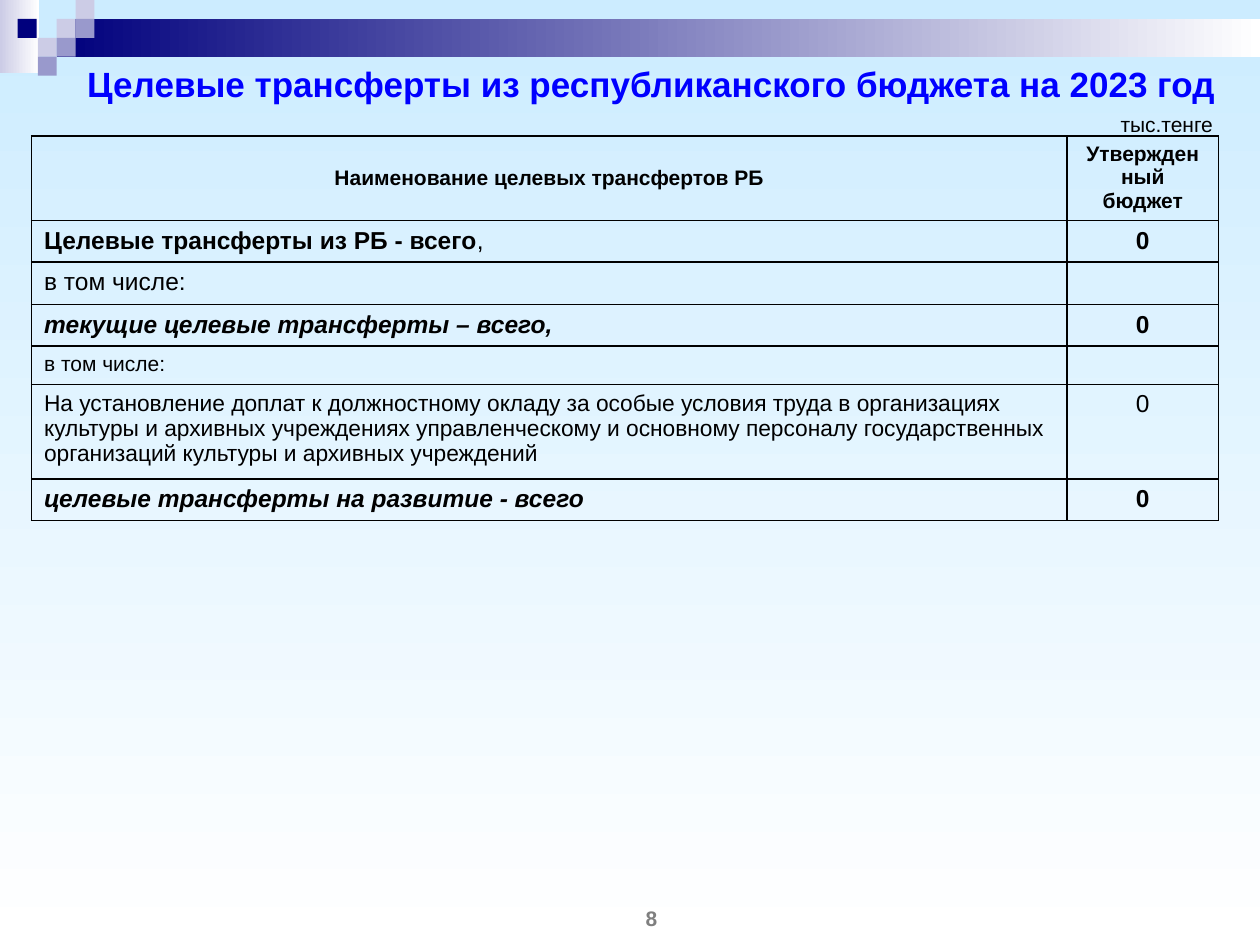
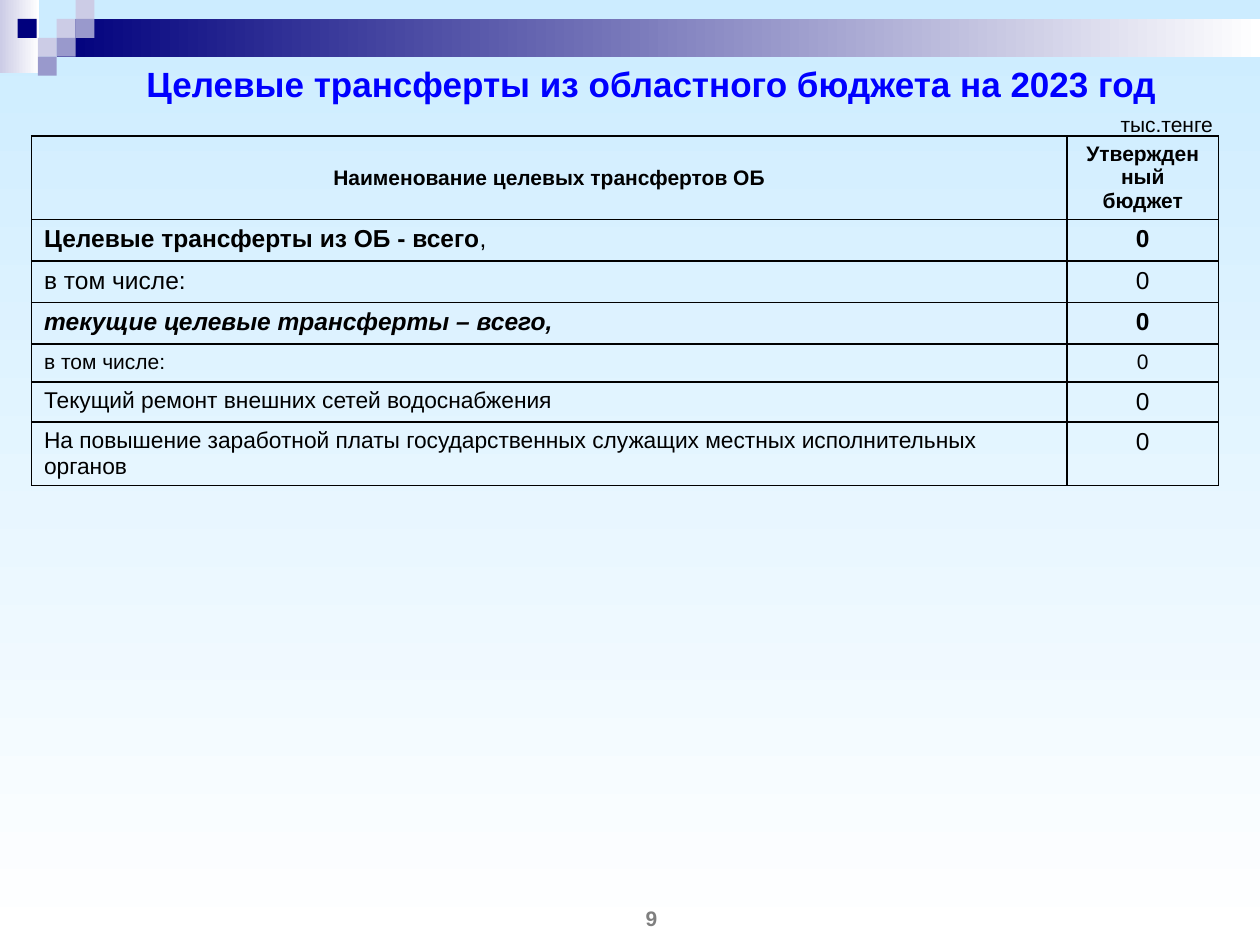
from lxml.etree import SubElement
from pptx import Presentation
from pptx.dml.color import RGBColor
from pptx.enum.shapes import MSO_SHAPE
from pptx.enum.text import MSO_ANCHOR, PP_ALIGN
from pptx.oxml.ns import qn
from pptx.util import Inches, Pt

FONT = "Arial"
BLACK, BLUE, GREY, WHITE = "000000", "0000FF", "7F7F7F", "FFFFFF"
SKY, NAVY, LILAC, VIOLET = "CCECFF", "00007D", "CCCCE6", "9999CC"

# Left, top, width, height, fill colours (two make a gradient)
SQ = 0.15
BAND = [
    (0, 0, 0.31, 0.58, LILAC, WHITE),
    (3 * SQ, SQ, 9.55, 2 * SQ, NAVY, WHITE),
    (0.14, SQ, SQ, SQ, NAVY),
] + [(col * SQ, row * SQ, SQ, SQ, color) for col, row, color in [
    (3, 1, LILAC), (4, 0, LILAC), (4, 1, VIOLET),
    (2, 2, LILAC), (3, 2, VIOLET), (2, 3, VIOLET)]]

TITLE_BOX = (0.43, 0.49, 9.48, 0.35)
UNIT_BOX = (8.57, 0.87, 1.38, 0.23)
NUMBER_BOX = (4.17, 7.08, 2, 0.42)
TABLE_AT = (0.25, 1.08)
COL_WIDTHS = (8.22, 1.2)
UNIT = "тыс.тенге"
BUDGET = "Утвержден ный бюджет"

# Formats of the name and of the value in each kind of row
STYLES = {
    "head": (dict(size=12, bold=True), dict(size=12, bold=True)),
    "total": (dict(size=14, bold=True), dict(size=14, bold=True)),
    "sub": (dict(size=14, bold=True, italic=True), dict(size=14, bold=True)),
    "plain": (dict(size=14), dict(size=14)),
    "small": (dict(size=12), dict(size=12)),
    "item": (dict(size=13), dict(size=14)),
}

# Rows: style, name, value, height
SLIDES = [
    dict(number="8", title="Целевые трансферты из республиканского бюджета на 2023 год", rows=[
        ("head", "Наименование целевых трансфертов РБ", BUDGET, 0.67),
        ("total", "Целевые трансферты из РБ - всего", "0", 0.33),
        ("plain", "в том числе:", "", 0.33),
        ("sub", "текущие целевые трансферты – всего,", "0", 0.33),
        ("small", "в том числе:", "", 0.3),
        ("item", "На установление доплат к должностному окладу за особые условия труда "
         "в организациях культуры и архивных учреждениях управленческому и основному "
         "персоналу государственных организаций культуры и архивных учреждений", "0", 0.75),
        ("sub", "целевые трансферты на развитие - всего", "0", 0.33),
    ]),
    dict(number="9", title="Целевые трансферты из областного бюджета на 2023 год", rows=[
        ("head", "Наименование целевых трансфертов ОБ", BUDGET, 0.66),
        ("total", "Целевые трансферты из ОБ - всего", "0", 0.33),
        ("plain", "в том числе:", "0", 0.33),
        ("sub", "текущие целевые трансферты – всего,", "0", 0.33),
        ("small", "в том числе:", "0", 0.3),
        ("item", "Текущий ремонт внешних сетей водоснабжения", "0", 0.32),
        ("item", "На повышение заработной платы государственных служащих местных "
         "исполнительных органов", "0", 0.5),
    ]),
]


def rgb(color):
    return RGBColor.from_string(color)


def inches(values):
    return [Inches(v) for v in values]


def paint(fill, colors, angle=0):
    """Fill with one colour, or with a gradient of two."""
    if len(colors) == 1:
        fill.solid()
        fill.fore_color.rgb = rgb(colors[0])
        return
    fill.gradient()
    fill.gradient_angle = angle
    for stop, color in zip(fill.gradient_stops, colors):
        stop.color.rgb = rgb(color)


def add_run(p, text, size, color=BLACK, bold=False, italic=False):
    r = p.add_run()
    r.text = text
    r.font.color.rgb = rgb(color)
    for name, value in dict(name=FONT, size=Pt(size), bold=bold, italic=italic).items():
        setattr(r.font, name, value)


def write_centred(sp, text, **fmt):
    tf = sp.text_frame
    for name, value in dict(word_wrap=True, vertical_anchor=MSO_ANCHOR.MIDDLE,
                            margin_top=0, margin_bottom=0).items():
        setattr(tf, name, value)
    p = tf.paragraphs[0]
    p.alignment = PP_ALIGN.CENTER
    add_run(p, text, **fmt)


def build_master(prs, s):
    """Draw the band on slide s, then move it to the master."""
    master = prs.slide_master
    paint(master.background.fill, (SKY, WHITE), 270)
    for i, (x, y, w, h, *colors) in enumerate(BAND):
        sp = s.shapes.add_shape(MSO_SHAPE.RECTANGLE, *inches((x, y, w, h)))
        sp.shadow.inherit = False
        sp.line.fill.background()
        paint(sp.fill, colors)
        sp._element.nvSpPr.cNvPr.id = 100 + i
        master.shapes._spTree.append(sp._element)


def set_borders(cell):
    tcPr = cell._tc.get_or_add_tcPr()
    for side in ("a:lnL", "a:lnR", "a:lnT", "a:lnB"):
        ln = SubElement(tcPr, qn(side), w=str(Pt(1)))
        SubElement(SubElement(ln, qn("a:solidFill")), qn("a:srgbClr"), val=BLACK)


def add_budget_table(s, rows):
    size = (sum(COL_WIDTHS), sum(row[-1] for row in rows))
    table = s.shapes.add_table(len(rows), len(COL_WIDTHS), *inches(TABLE_AT + size)).table
    table.first_row = table.horz_banding = False
    for col, width in zip(table.columns, COL_WIDTHS):
        col.width = Inches(width)
    for i, (style, name, value, height) in enumerate(rows):
        table.rows[i].height = Inches(height)
        for j, (text, fmt) in enumerate(zip((name, value), STYLES[style])):
            cell = table.cell(i, j)
            set_borders(cell)
            cell.fill.background()
            p = cell.text_frame.paragraphs[0]
            if j == 1 or style == "head":
                p.alignment = PP_ALIGN.CENTER
            if text:
                add_run(p, text, **fmt)
            else:
                SubElement(p._p, qn("a:endParaRPr"), sz=str(fmt["size"] * 100))
        if style == "head":
            table.cell(i, 0).vertical_anchor = MSO_ANCHOR.MIDDLE
        if style == "total":
            add_run(table.cell(i, 0).text_frame.paragraphs[0], ",", size=14)


def add_budget_slide(prs, title, rows, number):
    s = prs.slides.add_slide(prs.slide_layouts[5])
    sp = s.shapes.title
    sp.left, sp.top, sp.width, sp.height = inches(TITLE_BOX)
    write_centred(sp, title, size=20, color=BLUE, bold=True)
    add_budget_table(s, rows)
    write_centred(s.shapes.add_textbox(*inches(UNIT_BOX)), UNIT, size=12)
    write_centred(s.shapes.add_textbox(*inches(NUMBER_BOX)), number,
                  size=12, color=GREY, bold=True)
    return s


def main():
    prs = Presentation()
    prs.slide_width, prs.slide_height = inches((10, 7.5))
    slides = [add_budget_slide(prs, **content) for content in SLIDES]
    build_master(prs, slides[0])
    prs.save("out.pptx")


if __name__ == "__main__":
    main()
